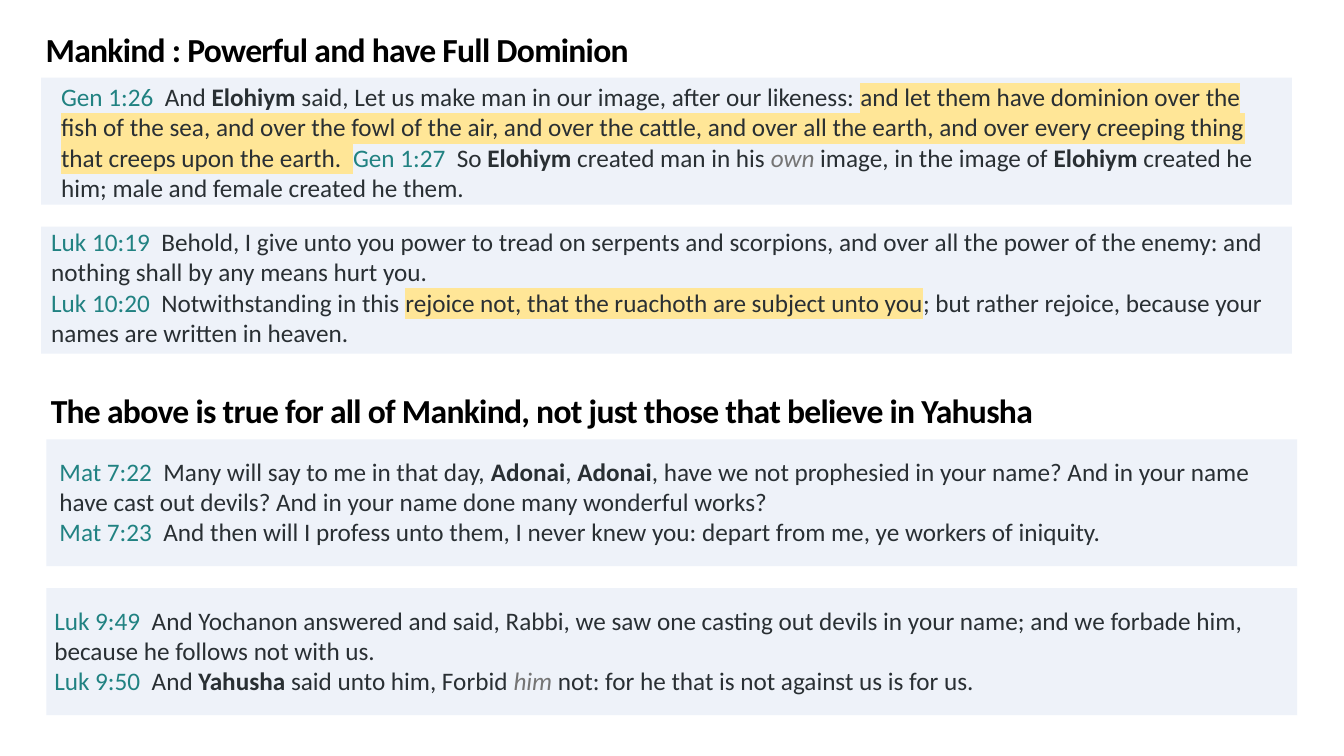
from lxml.etree import SubElement
from pptx import Presentation
from pptx.dml.color import RGBColor as Rgb
from pptx.enum.shapes import MSO_SHAPE as Shape
from pptx.enum.text import MSO_AUTO_SIZE as AutoSize
from pptx.oxml.ns import qn
from pptx.util import Cm, Pt

COLORS = {"panel": "EEF2F9", "reference": "218282", "body": "292F33",
          "added": "757575", "heading": "000000", "mark": "FFE697"}
STYLES = {
    "heading": {"size": Pt(24), "bold": True},
    "reference": {"size": Pt(18)},
    "body": {"size": Pt(18)},
    "name": {"size": Pt(18), "bold": True},
    "added": {"size": Pt(18), "italic": True},
    "mark": {"size": Pt(18)},
}
RUN_COLORS = {"name": "body", "mark": "body"}
PANEL_WIDTH, PANEL_HEIGHT, PANEL_PITCH = 31.52, 3.2, 3.75

GENESIS = [[
    ("reference", "Gen 1:26"), ("body", "  And "), ("name", "Elohiym"),
    ("body", " said, Let us make man in our image, after our likeness: "),
    ("mark", "and let them have dominion over the fish of the sea, and over the fowl "
             "of the air, and over the cattle, and over all the earth, and over every "
             "creeping thing that creeps upon the earth.  "),
    ("reference", "Gen 1:27"), ("body", "  So "), ("name", "Elohiym"),
    ("body", " created man in his "), ("added", "own"),
    ("body", " image, in the image of "), ("name", "Elohiym"),
    ("body", " created he him; male and female created he them."),
]]
LUKE_10 = [
    [("reference", "Luk 10:19"),
     ("body", "  Behold, I give unto you power to tread on serpents and scorpions, and "
              "over all the power of the enemy: and nothing shall by any means hurt you.")],
    [("reference", "Luk 10:20"), ("body", "  Notwithstanding in this "),
     ("mark", "rejoice not, that the ruachoth are subject unto you"),
     ("body", "; but rather rejoice, because your names are written in heaven.")],
]
MATTHEW = [
    [("reference", "Mat 7:22"), ("body", "  Many will say to me in that day, "),
     ("name", "Adonai"), ("body", ", "), ("name", "Adonai"),
     ("body", ", have we not prophesied in your name? And in your name have cast out "
              "devils? And in your name done many wonderful works?")],
    [("reference", "Mat 7:23"),
     ("body", "  And then will I profess unto them, I never knew you: depart from me, "
              "ye workers of iniquity.")],
]
LUKE_9 = [
    [("reference", "Luk 9:49"),
     ("body", "  And Yochanon answered and said, Rabbi, we saw one casting out devils in "
              "your name; and we forbade him, because he follows not with us.")],
    [("reference", "Luk 9:50"), ("body", "  And "), ("name", "Yahusha"),
     ("body", " said unto him, Forbid "), ("added", "him"),
     ("body", " not: for he that is not against us is for us.")],
]


def add_run(paragraph, style, text):
    """Append one run in the named style."""
    run = paragraph.add_run()
    run.text = text
    for attribute, value in STYLES[style].items():
        setattr(run.font, attribute, value)
    run.font.color.rgb = Rgb.from_string(COLORS[RUN_COLORS.get(style, style)])
    properties = run.font._element
    if style == "mark":
        highlight = SubElement(properties, qn("a:highlight"))
        SubElement(highlight, qn("a:srgbClr"), val=COLORS["mark"])
    if style == "heading":
        properties.set("spc", "-50")
    run.font.name = "Calibri"


def add_text(slide, box, paragraphs, line_spacing=None, auto_size=AutoSize.NONE):
    """Place a wrapped text box holding paragraphs of styled runs."""
    frame = slide.shapes.add_textbox(*map(Cm, box)).text_frame
    frame.word_wrap = True
    frame.auto_size = auto_size
    for index, runs in enumerate(paragraphs):
        paragraph = frame.add_paragraph() if index else frame.paragraphs[0]
        paragraph.line_spacing = line_spacing
        for style, text in runs:
            add_run(paragraph, style, text)


def add_passage(slide, left, top, passage):
    """Draw a tinted panel with its verses at the passage's inset."""
    verses, inset_x, inset_y, width, height = passage
    panel = slide.shapes.add_shape(
        Shape.RECTANGLE, *map(Cm, (left, top, PANEL_WIDTH, PANEL_HEIGHT)))
    panel.shadow.inherit = False
    panel.fill.solid()
    panel.fill.fore_color.rgb = Rgb.from_string(COLORS["panel"])
    panel.line.fill.background()
    add_text(slide, (left + inset_x, top + inset_y, width, height), verses,
             auto_size=AutoSize.SHAPE_TO_FIT_TEXT)


def add_section(slide, left, top, heading, heading_width, passages):
    """Stack passages below a heading, the first panel starting at left and top."""
    for index, passage in enumerate(passages):
        add_passage(slide, left, top + index * PANEL_PITCH, passage)
    add_text(slide, (left - 0.14, top - 1.25, heading_width, 1.55),
             [[("heading", heading)]], line_spacing=0.9)


def main():
    """Build and save the slide."""
    presentation = Presentation()
    presentation.slide_width, presentation.slide_height = Cm(33.87), Cm(19.05)
    slide = presentation.slides.add_slide(presentation.slide_layouts[6])
    add_section(slide, 1.04, 1.96, "Mankind : Powerful and have Full Dominion", 18.8,
                [(GENESIS, 0.25, -0.03, 30.86, 3.33), (LUKE_10, 0, -0.13, 31.78, 3.33)])
    add_section(slide, 1.17, 11.07,
                "The above is true for all of Mankind, not just those that believe in Yahusha",
                25.98,
                [(MATTHEW, 0.08, 0.3, 31.27, 2.57), (LUKE_9, -0.05, 0.3, 31.65, 2.57)])
    presentation.save("out.pptx")


if __name__ == "__main__":
    main()
